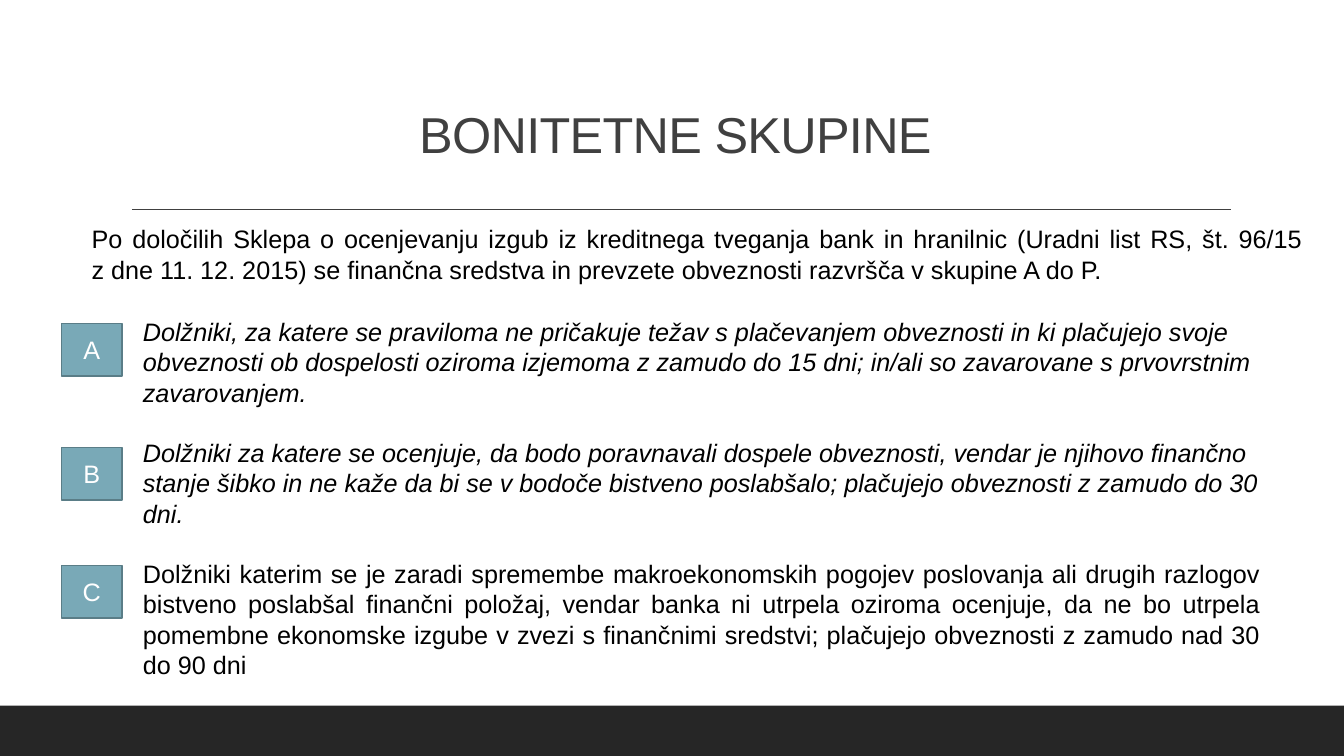
import pptx
import pptx.dml.color
import pptx.enum.shapes
import pptx.enum.text
import pptx.oxml
import pptx.util
from dataclasses import dataclass

Pt = pptx.util.Pt
ALIGN = pptx.enum.text.PP_ALIGN
ANCHOR = pptx.enum.text.MSO_ANCHOR


@dataclass(frozen=True)
class Theme:
    font: str = "Arial"
    title_size: float = 36
    body_size: float = 18
    text: str = "000000"
    heading: str = "404040"
    footer: str = "262626"
    badge: str = "79A9B7"
    badge_line: str = "5A7D87"
    badge_text: str = "FFFFFF"


class SlideBuilder:
    def __init__(self, page, theme):
        self.page = page
        self.theme = theme

    def color(self, value):
        return pptx.dml.color.RGBColor.from_string(value)

    def rectangle(self, left, top, width, height, fill, line=None):
        box = self.page.shapes.add_shape(
            pptx.enum.shapes.MSO_SHAPE.RECTANGLE,
            Pt(left), Pt(top), Pt(width), Pt(height))
        box.shadow.inherit = False
        box.fill.solid()
        box.fill.fore_color.rgb = self.color(fill)
        if line:
            box.line.color.rgb = self.color(line)
            box.line.width = Pt(1.25)
        else:
            box.line.fill.background()
        return box

    def rule(self, left, right, y):
        line = self.page.shapes.add_connector(
            pptx.enum.shapes.MSO_CONNECTOR.STRAIGHT,
            Pt(left), Pt(y), Pt(right), Pt(y))
        line.line.color.rgb = self.color(self.theme.heading)
        line.line.width = Pt(1)
        properties = line._element.spPr
        properties.append(pptx.oxml.parse_xml(
            '<a:effectLst xmlns:a="http://schemas.openxmlformats.org/drawingml/2006/main"/>'))

    def text_box(self, left, top, width, height, anchor=ANCHOR.TOP):
        box = self.page.shapes.add_textbox(Pt(left), Pt(top), Pt(width), Pt(height))
        box.text_frame.word_wrap = True
        box.text_frame.vertical_anchor = anchor
        return box.text_frame

    def span(self, para, text, size=None, color=None, italic=False):
        span = para.add_run()
        span.text = text
        span.font.name = self.theme.font
        span.font.size = Pt(size or self.theme.body_size)
        span.font.color.rgb = self.color(color or self.theme.text)
        span.font.italic = italic
        return span

    def title(self, text):
        frame = self.text_box(86.4, 22.3, 792, 98.6, ANCHOR.BOTTOM)
        para = frame.paragraphs[0]
        para.alignment = ALIGN.CENTER
        para.line_spacing = 0.9
        span = self.span(para, text, self.theme.title_size, self.theme.heading)
        span.font._element.set("spc", "-50")

    def introduction(self, lines):
        para = self.text_box(58.3, 156.2, 886.3, 51.1).paragraphs[0]
        para.alignment = ALIGN.JUSTIFY
        for index, line in enumerate(lines):
            if index:
                para.add_line_break()
            self.span(para, line)

    def badge(self, letter, top):
        theme = self.theme
        box = self.rectangle(43.9, top, 43.2, 37.4, theme.badge, theme.badge_line)
        box.text_frame.vertical_anchor = ANCHOR.MIDDLE
        para = box.text_frame.paragraphs[0]
        para.alignment = ALIGN.CENTER
        self.span(para, letter, color=theme.badge_text)

    def descriptions(self, groups):
        frame = self.text_box(95, 222.5, 812.2, 269.3)
        for index, (letter, top, text, italic) in enumerate(groups):
            para = frame.add_paragraph() if index else frame.paragraphs[0]
            para.alignment = ALIGN.LEFT if italic else ALIGN.JUSTIFY
            if index < len(groups) - 1:
                para.space_after = Pt(21.6)
            self.span(para, text, italic=italic)


INTRODUCTION = [
    "Po določilih Sklepa o ocenjevanju izgub iz kreditnega tveganja bank in hranilnic "
    "(Uradni list RS, št. 96/15 ",
    "z dne 11. 12. 2015) se finančna sredstva in prevzete obveznosti razvršča "
    "v skupine A do P.",
]

# Letter, badge top, description, italic
GROUPS = [
    ("A", 231.1,
     "Dolžniki, za katere se praviloma ne pričakuje težav s plačevanjem obveznosti in ki "
     "plačujejo svoje obveznosti ob dospelosti oziroma izjemoma z zamudo do 15 dni; in/ali "
     "so zavarovane s prvovrstnim zavarovanjem.", True),
    ("B", 319.7,
     "Dolžniki za katere se ocenjuje, da bodo poravnavali dospele obveznosti, vendar je "
     "njihovo finančno stanje šibko in ne kaže da bi se v bodoče bistveno poslabšalo; "
     "plačujejo obveznosti z zamudo do 30 dni.", True),
    ("C", 403.9,
     "Dolžniki katerim se je zaradi spremembe makroekonomskih pogojev poslovanja ali drugih "
     "razlogov bistveno poslabšal finančni položaj, vendar banka ni utrpela oziroma ocenjuje, "
     "da ne bo utrpela pomembne ekonomske izgube v zvezi s finančnimi sredstvi; plačujejo "
     "obveznosti z zamudo nad 30 do 90 dni", False),
]


def main():
    deck = pptx.Presentation()
    deck.slide_width, deck.slide_height = Pt(960), Pt(540)
    page = deck.slides.add_slide(deck.slide_layouts[6])
    builder = SlideBuilder(page, Theme())
    builder.rectangle(0, 504, 960, 36, builder.theme.footer)
    builder.rule(94.3, 879.1, 149.8)
    builder.title("BONITETNE SKUPINE")
    builder.introduction(INTRODUCTION)
    builder.descriptions(GROUPS)
    for letter, top, *_ in GROUPS:
        builder.badge(letter, top)
    deck.save("out.pptx")


if __name__ == "__main__":
    main()
